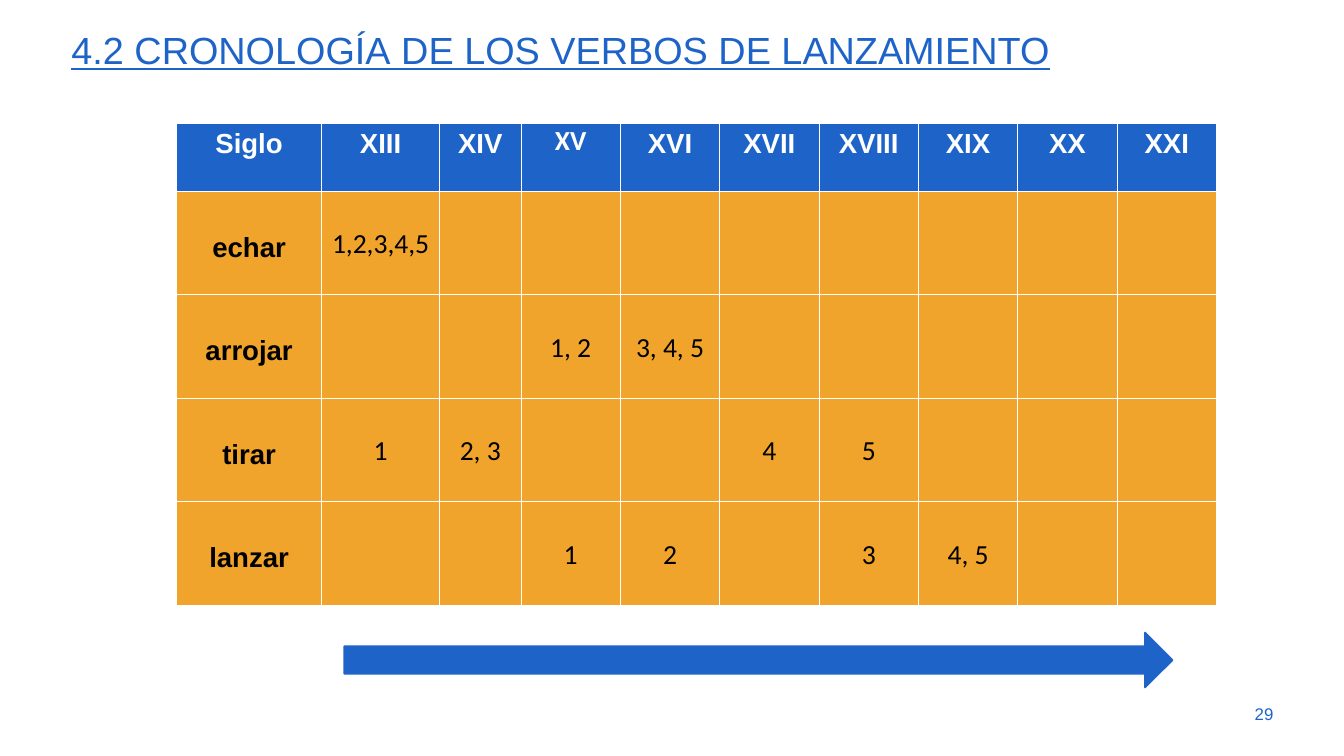
from lxml import etree
from pptx import Presentation
from pptx.dml.color import RGBColor
from pptx.enum.shapes import MSO_SHAPE
from pptx.enum.text import MSO_ANCHOR, PP_ALIGN
from pptx.oxml.ns import qn
from pptx.util import Cm, Pt

BLUE = RGBColor(0x1E, 0x64, 0xC8)
ORANGE = RGBColor(0xF1, 0xA4, 0x2B)
WHITE = RGBColor(0xFF, 0xFF, 0xFF)
BLACK = RGBColor(0x00, 0x00, 0x00)

LEFT, CENTER, RIGHT = PP_ALIGN.LEFT, PP_ALIGN.CENTER, PP_ALIGN.RIGHT
TOP, MIDDLE, BOTTOM = MSO_ANCHOR.TOP, MSO_ANCHOR.MIDDLE, MSO_ANCHOR.BOTTOM
RIGHT_ARROW = MSO_SHAPE.RIGHT_ARROW

CENTURIES = ["XIII", "XIV", "XV", "XVI", "XVII", "XVIII", "XIX", "XX", "XXI"]
SENSES = {
    "echar": {"XIII": "1,2,3,4,5"},
    "arrojar": {"XV": "1, 2", "XVI": "3, 4, 5"},
    "tirar": {"XIII": "1", "XIV": "2, 3", "XVII": "4", "XVIII": "5"},
    "lanzar": {"XV": "1", "XVI": "2", "XVIII": "3", "XIX": "4, 5"},
}
COLUMN_WIDTHS = [Cm(5.21), Cm(4.22), Cm(2.92)] + [Cm(3.56)] * 7
HEADER_HEIGHT, VERB_HEIGHT = Cm(2.44), Cm(3.71)
# Room left under the text: one line of the cell's font.
LINE_BELOW = {"Arial": Cm(1.14), "Calibri": Cm(1.21)}


def style_run(run, size, color, font="Arial", bold=False):
    run.font.name = font
    run.font.size = Pt(size)
    run.font.bold = bold
    run.font.color.rgb = color


def add_label(slide, text, left, top, width, height, size, align, anchor):
    frame = slide.shapes.add_textbox(left, top, width, height).text_frame
    frame.word_wrap = True
    frame.vertical_anchor = anchor
    frame.text = text
    paragraph = frame.paragraphs[0]
    paragraph.alignment = align
    style_run(paragraph.runs[0], size, BLUE)
    return paragraph


def add_title(slide, text):
    paragraph = add_label(slide, text, Cm(2.31), Cm(0.71), Cm(43.64), Cm(2.39),
                          48, LEFT, TOP)
    paragraph.line_spacing = 0.9
    font = paragraph.runs[0].font
    font.underline = True
    paragraph.runs[0]._r.get_or_add_rPr().set("cap", "small")


def set_borders(cell):
    properties = cell._tc.get_or_add_tcPr()
    for side in ("a:lnL", "a:lnR", "a:lnT", "a:lnB"):
        line = etree.SubElement(properties, qn(side), w=str(Pt(1)))
        fill = etree.SubElement(line, qn("a:solidFill"))
        etree.SubElement(fill, qn("a:srgbClr"), val=str(WHITE))


def fill_cell(cell, text, background, color, font, bold):
    set_borders(cell)
    cell.fill.solid()
    cell.fill.fore_color.rgb = background
    cell.vertical_anchor = BOTTOM
    cell.margin_left = cell.margin_right = cell.margin_top = Cm(0.03)
    cell.margin_bottom = LINE_BELOW[font]
    if text:
        cell.text = text
        paragraph = cell.text_frame.paragraphs[0]
        paragraph.alignment = CENTER
        style_run(paragraph.runs[0], 28, color, font, bold)


def add_chronology(slide):
    table = slide.shapes.add_table(
        len(SENSES) + 1, len(COLUMN_WIDTHS), Cm(6.32), Cm(4.42),
        sum(COLUMN_WIDTHS), HEADER_HEIGHT + VERB_HEIGHT * len(SENSES)).table
    for column, width in zip(table.columns, COLUMN_WIDTHS):
        column.width = width

    table.rows[0].height = HEADER_HEIGHT
    for col, heading in enumerate(["Siglo"] + CENTURIES):
        font = "Calibri" if heading == "XV" else "Arial"
        fill_cell(table.cell(0, col), heading, BLUE, WHITE, font, True)

    for row, (verb, senses) in enumerate(SENSES.items(), start=1):
        table.rows[row].height = VERB_HEIGHT
        fill_cell(table.cell(row, 0), verb, ORANGE, BLACK, "Arial", True)
        for col, century in enumerate(CENTURIES, start=1):
            fill_cell(table.cell(row, col), senses.get(century), ORANGE, BLACK,
                      "Calibri", False)


def add_time_arrow(slide):
    arrow = slide.shapes.add_shape(RIGHT_ARROW, Cm(12.34), Cm(22.68),
                                   Cm(29.67), Cm(1.96))
    arrow.shadow.inherit = False
    arrow.fill.solid()
    arrow.fill.fore_color.rgb = BLUE
    arrow.line.color.rgb = BLUE
    arrow.line.width = Pt(2)


def main():
    presentation = Presentation()
    presentation.slide_width = Cm(48.16)
    presentation.slide_height = Cm(27.1)
    slide = presentation.slides.add_slide(presentation.slide_layouts[6])

    add_title(slide, "4.2 cronología de los verbos de lanzamiento")
    add_label(slide, "29", Cm(43.31), Cm(24.87), Cm(2.57), Cm(1.45),
              17.1, RIGHT, MIDDLE)
    add_chronology(slide)
    add_time_arrow(slide)
    presentation.save("out.pptx")


if __name__ == "__main__":
    main()
